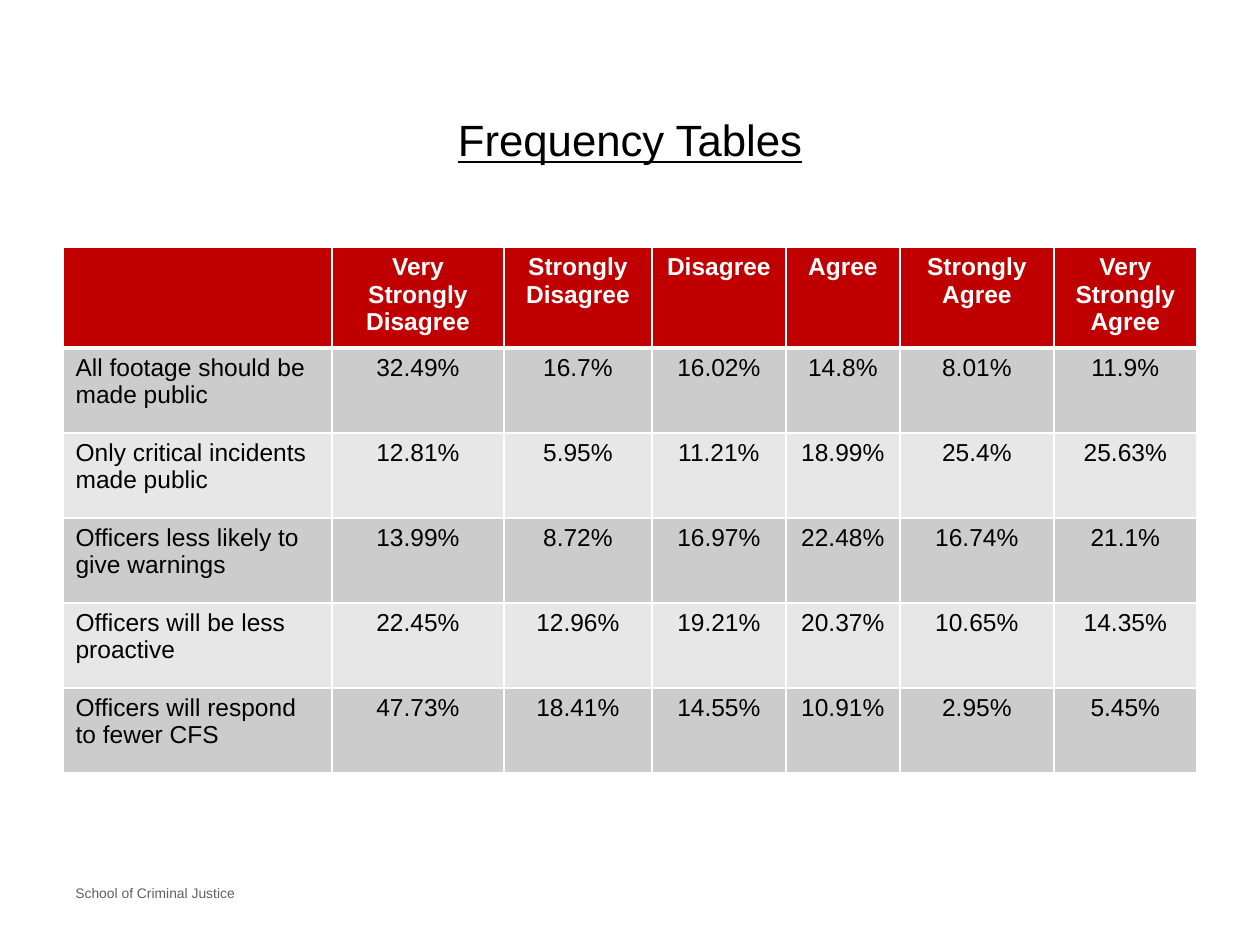
from lxml import etree
from pptx import Presentation
from pptx.dml.color import RGBColor
from pptx.enum.text import MSO_ANCHOR, PP_ALIGN
from pptx.oxml.ns import qn
from pptx.util import Pt

PX = 914400 / 126
LEFT, CENTER = PP_ALIGN.LEFT, PP_ALIGN.CENTER
MIDDLE = MSO_ANCHOR.MIDDLE
BLACK = RGBColor(0x00, 0x00, 0x00)
WHITE = RGBColor(0xFF, 0xFF, 0xFF)
RED = RGBColor(0xC0, 0x00, 0x00)
GRAY = RGBColor(0x5F, 0x5F, 0x5F)
BANDS = [RGBColor(0xCC, 0xCC, 0xCC), RGBColor(0xE7, 0xE7, 0xE7)]

WIDTHS = [269, 172, 148, 134, 114, 154, 143]
HEAD_H, ROW_H = 100, 85
ROWS = [
    ["", "Very Strongly Disagree", "Strongly Disagree", "Disagree", "Agree",
     "Strongly Agree", "Very Strongly Agree"],
    ["All footage should be made public",
     "32.49%", "16.7%", "16.02%", "14.8%", "8.01%", "11.9%"],
    ["Only critical incidents made public",
     "12.81%", "5.95%", "11.21%", "18.99%", "25.4%", "25.63%"],
    ["Officers less likely to give warnings",
     "13.99%", "8.72%", "16.97%", "22.48%", "16.74%", "21.1%"],
    ["Officers will be less proactive",
     "22.45%", "12.96%", "19.21%", "20.37%", "10.65%", "14.35%"],
    ["Officers will respond to fewer CFS",
     "47.73%", "18.41%", "14.55%", "10.91%", "2.95%", "5.45%"],
]


def px(*vals):
    """Turn pixel lengths into EMU."""
    return [round(v * PX) for v in vals]


def write(frame, text, size=14, color=BLACK, bold=False, line=False, align=LEFT):
    frame.word_wrap = True
    para = frame.paragraphs[0]
    para.alignment = align
    run = para.add_run()
    run.text = text
    font = run.font
    font.name, font.size, font.bold = "Arial", Pt(size), bold
    font.underline = line
    font.color.rgb = color


deck = Presentation()
deck.slide_width, deck.slide_height = px(1260, 945)
slide = deck.slides.add_slide(deck.slide_layouts[6])
shapes = slide.shapes

foot = shapes.add_textbox(*px(63, 878, 315, 29)).text_frame
write(foot, "School of Criminal Justice", size=7.9, color=GRAY)

height = HEAD_H + ROW_H * (len(ROWS) - 1)
table = shapes.add_table(len(ROWS), len(WIDTHS),
                         *px(63, 247, sum(WIDTHS), height)).table
for col, width in zip(table.columns, px(*WIDTHS)):
    col.width = width

for r, row in enumerate(ROWS):
    head = r == 0
    table.rows[r].height = px(HEAD_H if head else ROW_H)[0]
    for c, text in enumerate(row):
        cell = table.cell(r, c)
        cell.fill.solid()
        cell.fill.fore_color.rgb = RED if head else BANDS[(r - 1) % 2]
        if text:
            write(cell.text_frame, text, color=WHITE if head else BLACK,
                  bold=head, align=CENTER if c else LEFT)
        props = cell._tc.get_or_add_tcPr()
        for i, side in enumerate(["lnL", "lnR", "lnT", "lnB"]):
            thick = (head and side == "lnB") or (r == 1 and side == "lnT")
            edge = etree.Element(qn("a:" + side), w=str(Pt(3 if thick else 1)))
            fill = etree.SubElement(edge, qn("a:solidFill"))
            etree.SubElement(fill, qn("a:srgbClr"), val=str(WHITE))
            props.insert(i, edge)

title = shapes.add_textbox(*px(63, 84, 1134, 111)).text_frame
title.vertical_anchor = MIDDLE
write(title, "Frequency Tables", size=25, line=True, align=CENTER)

deck.save("out.pptx")
